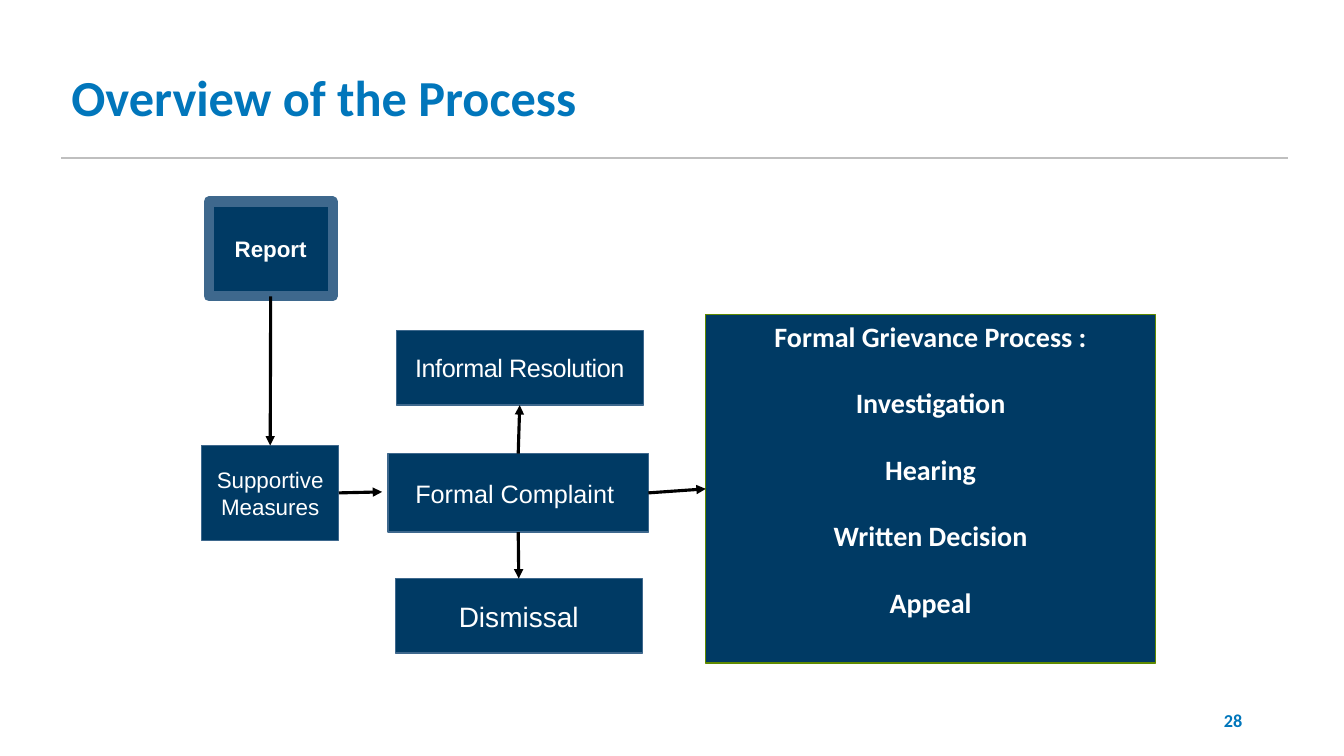
from lxml import etree
from pptx import Presentation
from pptx.dml.color import RGBColor
from pptx.enum.shapes import MSO_CONNECTOR, MSO_SHAPE
from pptx.enum.text import MSO_ANCHOR, PP_ALIGN
from pptx.oxml.ns import qn
from pptx.util import Inches, Pt

RECT, STRAIGHT = MSO_SHAPE.RECTANGLE, MSO_CONNECTOR.STRAIGHT
LEFT, CENTER, RIGHT = PP_ALIGN.LEFT, PP_ALIGN.CENTER, PP_ALIGN.RIGHT
TOP, MIDDLE = MSO_ANCHOR.TOP, MSO_ANCHOR.MIDDLE
SIDE_TOP, SIDE_LEFT, SIDE_BOTTOM, SIDE_RIGHT = range(4)

# Content
BLUE, NAVY, STEEL, GREEN = "0176BB", "003A64", "3E688D", "5F8A00"
GREY, WHITE, BLACK = "BFBFBF", "FFFFFF", "000000"

TITLE = "Overview of the Process"
PAGE = "28"
STEPS = ["Formal Grievance Process :", "Investigation", "Hearing",
         "Written Decision", "Appeal"]
STEP_GAP = 23.5

# name: (lines, (left, top, width, height), line colour, line width, anchor, font)
BOXES = {
    "process": (STEPS, (7, 3.12, 4.46, 3.46), GREEN, 1, TOP,
                {"name": "Calibri", "size": Pt(20), "bold": True}),
    "dismissal": (["Dismissal"], (3.92, 5.74, 2.45, 0.74), STEEL, 1, MIDDLE,
                  {"name": "Arial", "size": Pt(20)}),
    "informal": (["Informal Resolution"], (3.93, 3.28, 2.45, 0.74), STEEL, 1, MIDDLE,
                 {"name": "Arial", "size": Pt(18)}),
    "complaint": (["Formal Complaint "], (3.85, 4.5, 2.58, 0.78), STEEL, 1, MIDDLE,
                  {"name": "Arial", "size": Pt(18)}),
    "supportive": (["Supportive Measures"], (2, 4.42, 1.36, 0.94), STEEL, 1, MIDDLE,
                   {"name": "Arial", "size": Pt(16)}),
    "report": (["Report"], (2.07, 2, 1.23, 0.94), STEEL, 7.25, MIDDLE,
               {"name": "Arial", "size": Pt(16), "bold": True}),
}
TRACKING = {"informal": "-30"}

ARROWS = [
    ("report", SIDE_BOTTOM, "supportive", SIDE_TOP),
    ("complaint", SIDE_TOP, "informal", SIDE_BOTTOM),
    ("complaint", SIDE_BOTTOM, "dismissal", SIDE_TOP),
    ("complaint", SIDE_RIGHT, "process", SIDE_LEFT),
]


# Helpers
def color(value):
    return RGBColor.from_string(value)


def write(sp, lines, fmt, font_color, align, anchor, gap=0):
    tf = sp.text_frame
    tf.word_wrap = True
    tf.vertical_anchor = anchor
    for i, line in enumerate(lines):
        p = tf.add_paragraph() if i else tf.paragraphs[0]
        p.alignment = align
        p.space_before = Pt(gap if i else 0)
        r = p.add_run()
        r.text = line
        for key, value in fmt.items():
            setattr(r.font, key, value)
        r.font.color.rgb = color(font_color)
    return tf


def add_text(place, text, fmt, align, anchor):
    sp = s.shapes.add_textbox(*map(Inches, place))
    return write(sp, [text], fmt, BLUE, align, anchor)


def add_line(start, end, line_color, width, arrow=False):
    cx = s.shapes.add_connector(STRAIGHT, *map(Inches, start + end))
    cx.line.color.rgb = color(line_color)
    cx.line.width = Pt(width)
    if arrow:
        ln = cx.line._get_or_add_ln()
        etree.SubElement(ln, qn("a:tailEnd"), type="triangle")
    etree.SubElement(cx._element.spPr, qn("a:effectLst"))
    return cx


prs = Presentation()
prs.slide_width, prs.slide_height = Inches(13.33), Inches(7.5)
s = prs.slides.add_slide(prs.slide_layouts[6])

# Heading, rule and page number
tf = add_text((0.61, 0.67, 9.23, 0.65), TITLE,
              {"name": "Calibri", "size": Pt(36), "bold": True}, LEFT, TOP)
tf.paragraphs[0].line_spacing = 0.9
add_line((0.61, 1.57), (12.77, 1.57), GREY, 1.75)
add_text((9.42, 6.95, 3, 0.4), PAGE,
         {"name": "Calibri", "size": Pt(13), "bold": True}, RIGHT, MIDDLE)

# Process boxes
shapes = {}
for name, (lines, place, line_color, width, anchor, fmt) in BOXES.items():
    sp = s.shapes.add_shape(RECT, *map(Inches, place))
    sp.shadow.inherit = False
    sp.fill.solid()
    sp.fill.fore_color.rgb = color(NAVY)
    sp.line.color.rgb = color(line_color)
    sp.line.width = Pt(width)
    tf = write(sp, lines, fmt, WHITE, CENTER, anchor, STEP_GAP)
    if name in TRACKING:
        tf.paragraphs[0].runs[0].font._element.set("spc", TRACKING[name])
    shapes[name] = sp

# Arrows between boxes
for source, source_side, target, target_side in ARROWS:
    cx = add_line((0, 0), (0, 0), BLACK, 2.25, arrow=True)
    cx.begin_connect(shapes[source], source_side)
    cx.end_connect(shapes[target], target_side)

# This arrow stops just short of the complaint box
cx = add_line((3.36, 4.89), (3.79, 4.88), BLACK, 2.25, arrow=True)
cx.begin_connect(shapes["supportive"], SIDE_RIGHT)

prs.save("out.pptx")
